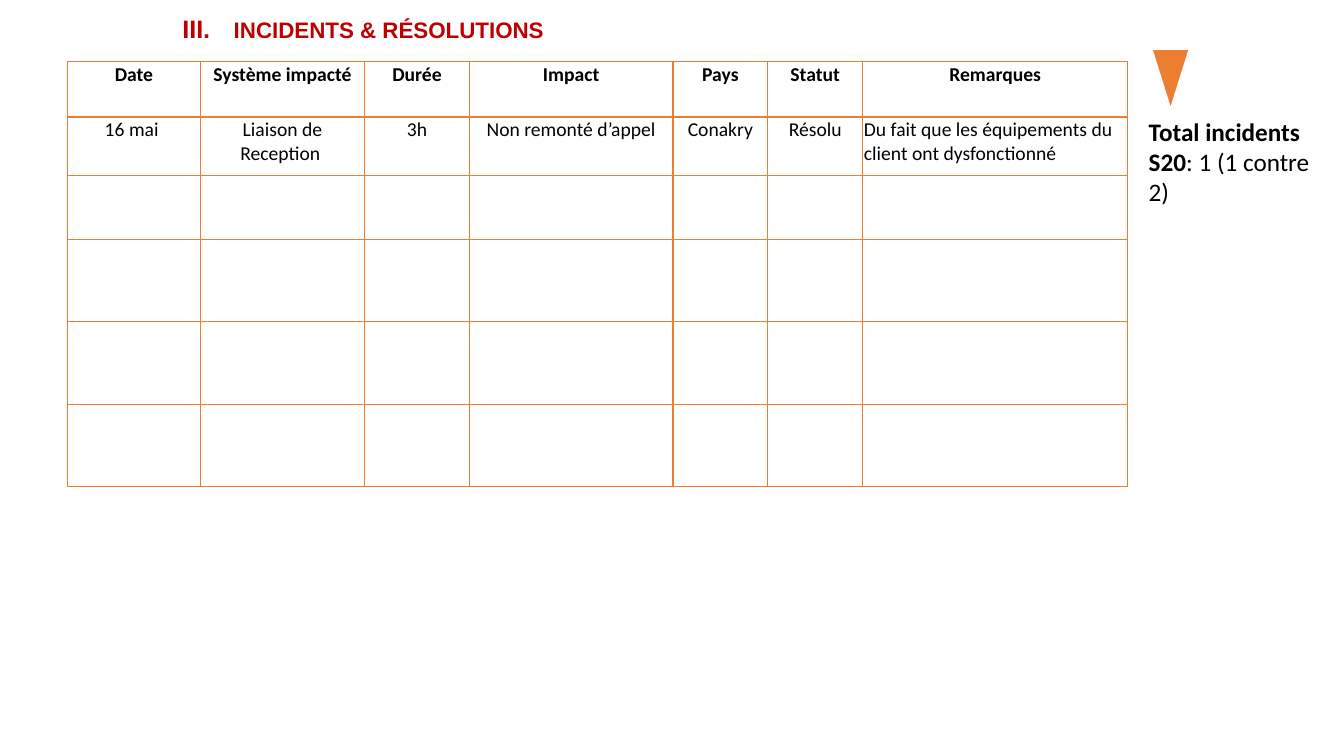
from dataclasses import dataclass

import pptx
import pptx.dml.color
import pptx.enum.shapes
import pptx.enum.text
import pptx.oxml
import pptx.oxml.ns
import pptx.util

Cm = pptx.util.Cm
Pt = pptx.util.Pt
Align = pptx.enum.text.PP_ALIGN
NS = pptx.oxml.ns.nsdecls("a")


@dataclass(frozen=True)
class Theme:
    red: str = "C00000"
    black: str = "000000"
    orange: str = "ED7D31"
    white: str = "FFFFFF"
    head: str = "Arial"
    body: str = "Calibri"
    large: int = 18
    title: int = 16
    cell: int = 14


THEME = Theme()
WIDTHS = (3.35, 4.14, 2.64, 5.13, 2.39, 2.39, 6.68)
HEIGHTS = (1.4, 1.48, 1.6, 2.08, 2.08, 2.08)
ROWS = (
    ("Date", "Système impacté", "Durée", "Impact", "Pays", "Statut", "Remarques"),
    ("16 mai ", "Liaison de Reception ", "3h", "Non remonté d’appel",
     "Conakry", "Résolu",
     "Du fait que les équipements du client ont dysfonctionné"),
)


def color(code):
    return pptx.dml.color.RGBColor.from_string(code)


def add_run(para, text, size, bold=False, face=THEME.body, ink=THEME.black):
    run = para.add_run()
    run.text = text
    run.font.name = face
    run.font.size = Pt(size)
    run.font.bold = bold
    run.font.color.rgb = color(ink)


def add_title(slide):
    title = slide.shapes.title
    title.left, title.top = Cm(4.34), Cm(0.2)
    title.width, title.height = Cm(16.94), Cm(1.02)
    frame = title.text_frame
    frame.word_wrap = True
    frame.auto_size = pptx.enum.text.MSO_AUTO_SIZE.SHAPE_TO_FIT_TEXT
    frame.vertical_anchor = pptx.enum.text.MSO_ANCHOR.TOP
    para = frame.paragraphs[0]
    para.alignment = Align.LEFT
    props = para._p.get_or_add_pPr()
    props.set("marL", str(Cm(1.12)))
    props.set("indent", str(-Cm(1.12)))
    props.append(pptx.oxml.parse_xml(
        f'<a:buAutoNum {NS} type="romanUcPeriod" startAt="3"/>'))
    add_run(para, " ", THEME.large, True, THEME.head, THEME.red)
    add_run(para, "INCIDENTS & RÉSOLUTIONS", THEME.title, True, THEME.head, THEME.red)


def style_cell(cell):
    cell.margin_left = cell.margin_right = cell.margin_top = Cm(0.03)
    cell.margin_bottom = 0
    props = cell._tc.get_or_add_tcPr()
    for side in ("lnL", "lnR", "lnT", "lnB"):
        props.append(pptx.oxml.parse_xml(
            f'<a:{side} {NS} w="{Pt(1)}"><a:solidFill>'
            f'<a:srgbClr val="{THEME.orange}"/></a:solidFill></a:{side}>'))
    cell.fill.background()


def add_grid(slide):
    frame = slide.shapes.add_table(
        len(HEIGHTS), len(WIDTHS), Cm(1.7), Cm(1.55),
        Cm(sum(WIDTHS)), Cm(sum(HEIGHTS)))
    table = frame.table
    table.first_row = table.horz_banding = False
    for col, width in zip(table.columns, WIDTHS):
        col.width = Cm(width)
    for row, height in zip(table.rows, HEIGHTS):
        row.height = Cm(height)
    for cell in table.iter_cells():
        style_cell(cell)
    for r, texts in enumerate(ROWS):
        for c, text in enumerate(texts):
            para = table.cell(r, c).text_frame.paragraphs[0]
            note = r > 0 and c == len(WIDTHS) - 1
            para.alignment = Align.LEFT if note else Align.CENTER
            add_run(para, text, THEME.cell, r == 0)


def add_total(slide):
    box = slide.shapes.add_textbox(Cm(28.7), Cm(2.8), Cm(4.7), Cm(2.56))
    frame = box.text_frame
    frame.word_wrap = True
    frame.auto_size = pptx.enum.text.MSO_AUTO_SIZE.SHAPE_TO_FIT_TEXT
    para = frame.paragraphs[0]
    add_run(para, "Total incidents S20", THEME.large, True)
    add_run(para, ": 1 (1 contre 2)", THEME.large)


def add_trend(slide):
    mark = slide.shapes.add_shape(
        pptx.enum.shapes.MSO_SHAPE.ISOSCELES_TRIANGLE,
        Cm(29.03), Cm(1.24), Cm(0.94), Cm(1.5))
    mark.rotation = 180
    mark.shadow.inherit = False
    mark.fill.solid()
    mark.fill.fore_color.rgb = color(THEME.orange)
    mark.line.color.rgb = color(THEME.white)
    mark.line.width = Pt(1)


def main():
    deck = pptx.Presentation()
    deck.slide_width, deck.slide_height = Cm(33.87), Cm(19.05)
    slide = deck.slides.add_slide(deck.slide_layouts.get_by_name("Title Only"))
    add_title(slide)
    add_grid(slide)
    add_total(slide)
    add_trend(slide)
    deck.save("out.pptx")


if __name__ == "__main__":
    main()
